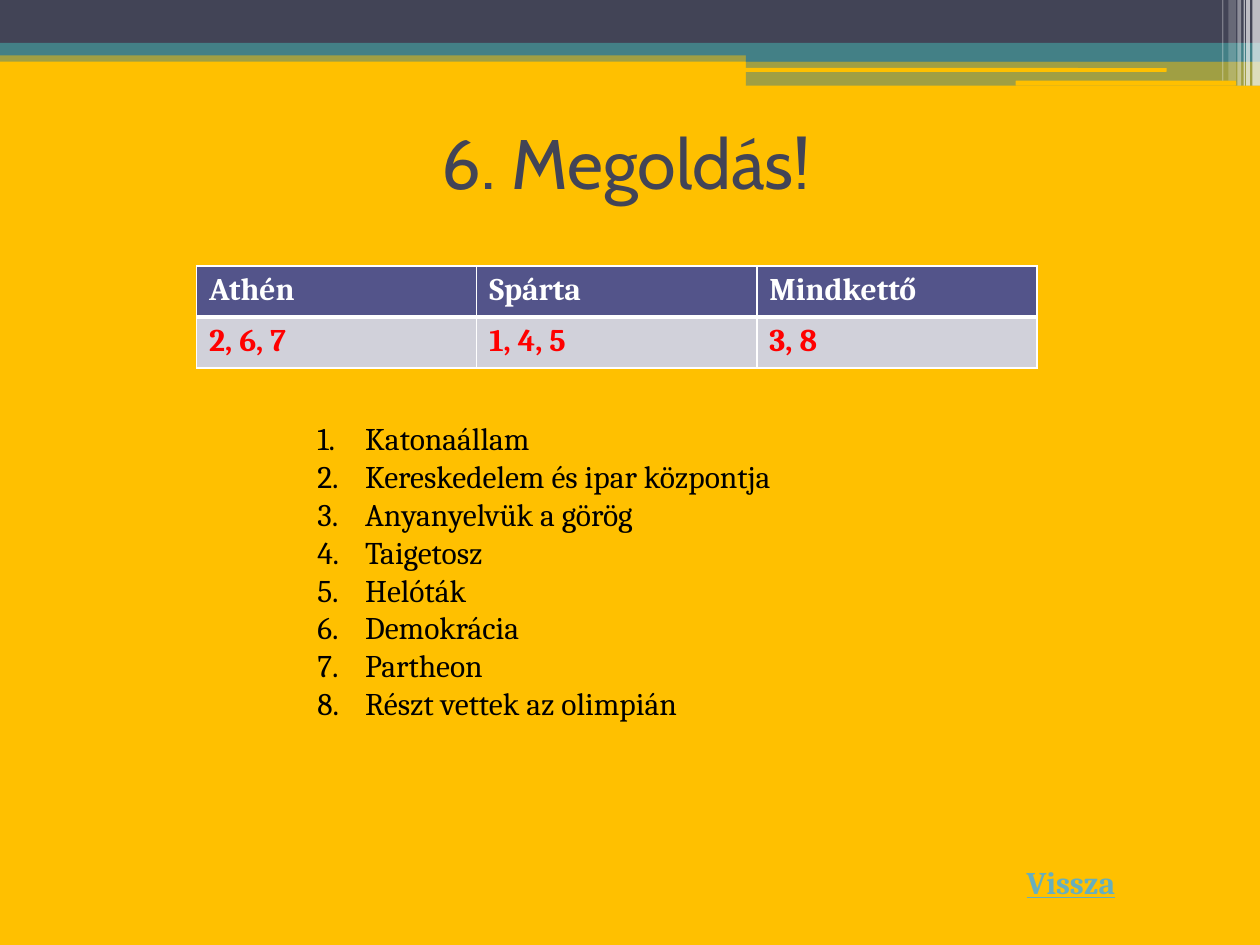
from lxml.etree import SubElement
from pptx import Presentation
from pptx.dml.color import RGBColor
from pptx.enum.shapes import MSO_SHAPE as Shape
from pptx.enum.text import MSO_ANCHOR as Anchor, MSO_AUTO_SIZE as AutoSize, PP_ALIGN as Align
from pptx.oxml.ns import qn
from pptx.util import Inches, Pt

YELLOW, NAVY, TEAL, WHITE = "FFC000", "424456", "438086", "FFFFFF"
INDIGO, LILAC, RED, BLACK, LINK = "53548A", "D1D1DA", "FF0000", "000000", "67AFBD"


def paint(fill, color, alpha=100):
    fill.solid()
    fill.fore_color.rgb = RGBColor.from_string(color)
    if alpha < 100:
        tint = fill._xPr.find(qn("a:solidFill"))[0]
        SubElement(tint, qn("a:alpha"), val=str(alpha * 1000))


def add_run(paragraph, words, color, size=18, font="Cambria", bold=None):
    run = paragraph.add_run()
    run.text = words
    run.font.name, run.font.size, run.font.bold = font, Pt(size), bold
    run.font.color.rgb = RGBColor.from_string(color)
    return run


def add_frame(slide, box, wrap=True):
    frame = slide.shapes.add_textbox(*map(Inches, box)).text_frame
    frame.word_wrap = wrap
    return frame


def add_bar(slide, box, color, alpha=100, kind=Shape.RECTANGLE):
    bar = slide.shapes.add_shape(kind, *map(Inches, box))
    bar.shadow.inherit = False
    bar.line.fill.background()
    paint(bar.fill, color, alpha)


def add_banner(slide, width):
    # Full-width bands, then the stepped bands on the right
    add_bar(slide, (0, 0.4, width, 0.09), TEAL, 50)
    add_bar(slide, (0, 0, width, 0.34), NAVY)
    add_bar(slide, (0, 0.34, width, 0.1), TEAL)
    step = 5.92
    add_bar(slide, (step, 0.39, width - step, 0.1), TEAL)
    add_bar(slide, (step, 0.48, width - step, 0.2), TEAL, 50)
    # Background-coloured slits
    for slit in ((5.91, 0.54, 3.35, 0.03), (8.06, 0.64, 1.75, 0.04)):
        add_bar(slide, slit, YELLOW, kind=Shape.ROUNDED_RECTANGLE)
    # Translucent stripes in the corner: left, width, height, opacity
    for left, thickness, height, alpha in (
        (9.94, 0.06, 0.68, 65), (9.89, 0.03, 0.68, 65), (9.87, 0.01, 0.68, 60),
        (9.82, 0.03, 0.68, 40), (9.75, 0.06, 0.64, 20), (9.7, 0.01, 0.64, 30),
    ):
        add_bar(slide, (left, 0, thickness, height), WHITE, alpha)


def add_title(slide, box, words):
    frame = add_frame(slide, box)
    frame.vertical_anchor = Anchor.MIDDLE
    heading = frame.paragraphs[0]
    heading.alignment = Align.CENTER
    add_run(heading, words, NAVY, 40, "Cabin")


def add_borders(cell, widths):
    props = cell._tc.get_or_add_tcPr()
    for index, (side, width) in enumerate(widths.items()):
        line = props.makeelement(qn(f"a:{side}"), {"w": str(Pt(width))})
        color = SubElement(SubElement(line, qn("a:solidFill")), qn("a:srgbClr"))
        color.set("val", WHITE)
        props.insert(index, line)


def add_answers(slide, box, rows):
    table = slide.shapes.add_table(len(rows), len(rows[0]), *map(Inches, box)).table
    styles = (
        (INDIGO, WHITE, {"lnL": 1, "lnR": 1, "lnT": 1, "lnB": 3}),
        (LILAC, RED, {"lnL": 1, "lnR": 1, "lnT": 3, "lnB": 1}),
    )
    for r, (row, (fill, color, borders)) in enumerate(zip(rows, styles)):
        for c, words in enumerate(row):
            cell = table.cell(r, c)
            paint(cell.fill, fill)
            add_borders(cell, borders)
            add_run(cell.text_frame.paragraphs[0], words, color, bold=True)


def add_statements(slide, box, statements):
    frame = add_frame(slide, box)
    frame.auto_size = AutoSize.SHAPE_TO_FIT_TEXT
    indent = Inches(0.38)
    for index, words in enumerate(statements):
        item = frame.add_paragraph() if index else frame.paragraphs[0]
        props = item._p.get_or_add_pPr()
        props.set("marL", str(indent))
        props.set("indent", str(-indent))
        SubElement(props, qn("a:buFont"), typeface="+mj-lt")
        SubElement(props, qn("a:buAutoNum"), type="arabicPeriod")
        add_run(item, words, BLACK)


def add_back_label(slide, box, words):
    frame = add_frame(slide, box, wrap=False)
    frame.auto_size = AutoSize.SHAPE_TO_FIT_TEXT
    add_run(frame.paragraphs[0], words, LINK, bold=True).font.underline = True


def main():
    deck = Presentation()
    deck.slide_width, deck.slide_height = Inches(10), Inches(7.5)
    slide = deck.slides.add_slide(deck.slide_layouts[6])
    paint(slide.background.fill, YELLOW)
    add_banner(slide, 10)
    add_title(slide, (0.47, 0.7, 9, 1.17), "6. Megoldás!")
    add_back_label(slide, (8.05, 6.8, 1.03, 0.4), "Vissza")
    add_answers(slide, (1.56, 2.11, 6.67, 0.81), [
        ("Athén", "Spárta", "Mindkettő"),
        ("2, 6, 7", "1, 4, 5", "3, 8"),
    ])
    add_statements(slide, (2.42, 3.28, 4.53, 2.52), [
        "Katonaállam", "Kereskedelem és ipar központja", "Anyanyelvük a görög",
        "Taigetosz", "Helóták", "Demokrácia", "Partheon", "Részt vettek az olimpián",
    ])
    deck.save("out.pptx")


if __name__ == "__main__":
    main()
